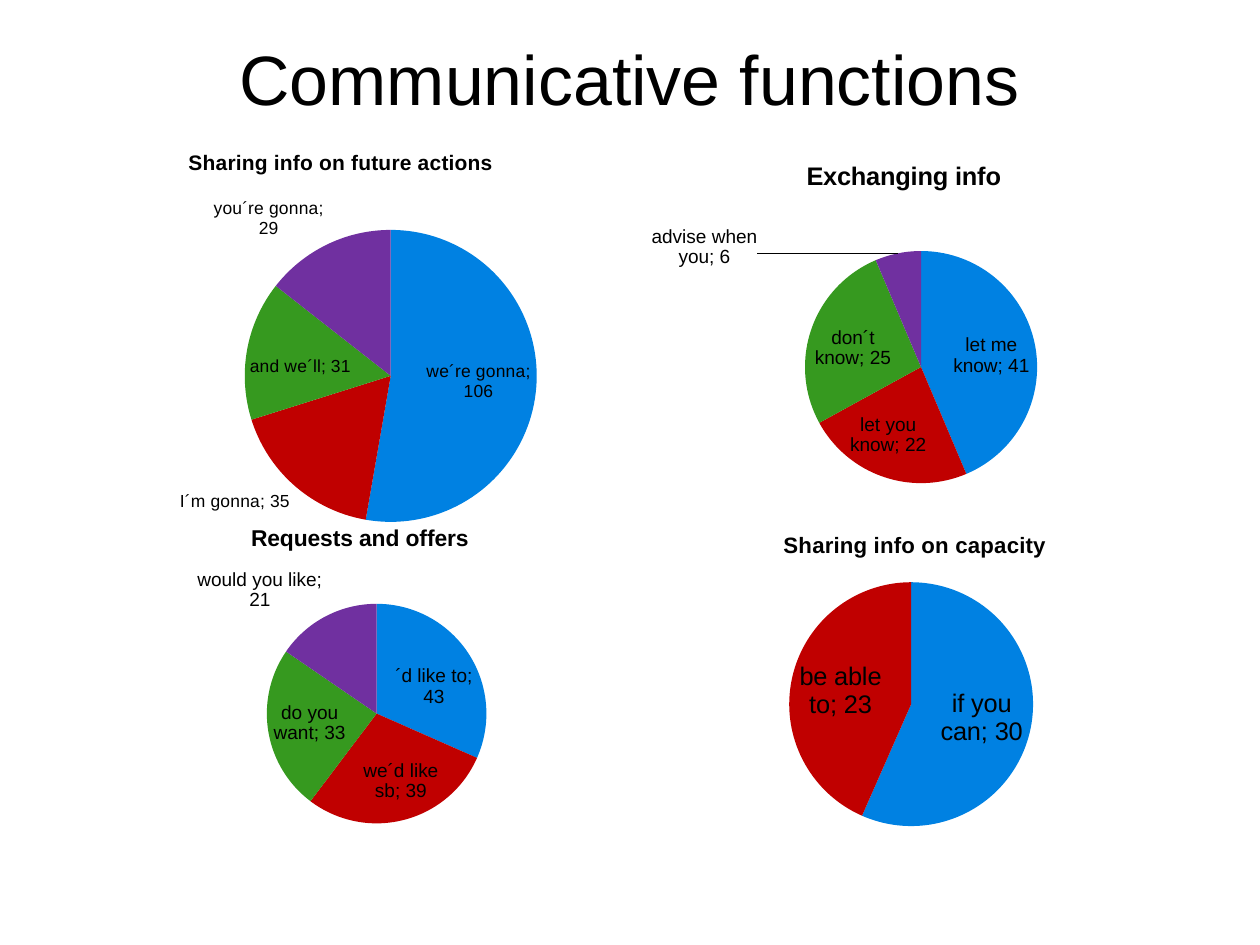
from pptx import Presentation
from pptx import util as u
from pptx.chart.data import CategoryChartData
from pptx.dml.color import RGBColor
from pptx.enum import chart as ch, text
from pptx.oxml import parse_xml
from pptx.oxml.ns import nsdecls, qn

FONT = "Arial"
SLICES = ["0081E2", "C00000", "36991F", "7030A0"]


def color(value):
    return RGBColor.from_string(value)


def style_font(font, size, bold=False, fill="000000"):
    font.name, font.size, font.bold = FONT, u.Pt(size), bold
    font.color.rgb = color(fill)


def write(tf, words, size, bold=False, spacing=None):
    p = tf.paragraphs[0]
    p.alignment = text.PP_ALIGN.CENTER
    p.line_spacing = spacing
    r = p.add_run()
    r.text = words
    style_font(r.font, size, bold)


def set_layout(parent, index, x, y, w=None, h=None):
    """Place a chart part by fractions of the chart box."""
    old = parent.find(qn("c:layout"))
    if old is not None:
        parent.remove(old)
    parts = [("xMode", "edge"), ("yMode", "edge")] if parent.tag != qn("c:dLbl") else []
    if w:
        parts.insert(0, ("layoutTarget", "inner"))
    parts += [("x", round(x, 4)), ("y", round(y, 4))]
    if w:
        parts += [("w", round(w, 4)), ("h", round(h, 4))]
    body = "".join(f'<c:{tag} val="{val}"/>' for tag, val in parts)
    parent.insert(index, parse_xml(
        f'<c:layout {nsdecls("c")}><c:manualLayout>{body}</c:manualLayout></c:layout>'))


def add_separator(labels):
    sep = parse_xml(f'<c:separator {nsdecls("c")}>; </c:separator>')
    labels.find(qn("c:showBubbleSize")).addnext(sep)


def title_region(s, box):
    sp = s.shapes.title
    sp.left, sp.top, sp.width, sp.height = (u.Cm(v) for v in box)
    tf = sp.text_frame
    tf.word_wrap = True
    tf.vertical_anchor = text.MSO_ANCHOR.TOP
    write(tf, "Communicative functions", 44, spacing=0.93)


def pie_region(s, box, name, counts, title_at, title_size, pie_at, diameter,
               label_size, moved=None):
    """Pie in box; title_at and pie_at are offsets from its corner in cm."""
    w, h = box[2:]
    data = CategoryChartData()
    data.categories = list(counts)
    data.add_series(name, list(counts.values()))
    chart = s.shapes.add_chart(ch.XL_CHART_TYPE.PIE, *(u.Cm(v) for v in box), data).chart
    chart.has_legend = False
    style_font(chart.font, label_size)

    # Chart title and plot position
    write(chart.chart_title.text_frame, name, title_size, bold=True)
    chart.chart_title.include_in_layout = False
    title = chart._chartSpace.chart.find(qn("c:title"))
    set_layout(title, 1, title_at[0] / w, title_at[1] / h)
    set_layout(chart._chartSpace.chart.plotArea, 0, pie_at[0] / w, pie_at[1] / h,
               diameter / w, diameter / h)

    # Slices
    plot = chart.plots[0]
    plot.vary_by_categories = True
    series = plot.series[0]
    for i, fill in enumerate(SLICES[:len(counts)]):
        fmt = series.points[i].format
        fmt.fill.solid()
        fmt.fill.fore_color.rgb = color(fill)
        fmt.line.fill.background()

    # Labels
    labels = series.data_labels
    labels.show_value = labels.show_category_name = True
    labels.position = ch.XL_LABEL_POSITION.BEST_FIT
    style_font(labels.font, label_size)
    add_separator(labels._element)
    if moved:
        i, dx, dy = moved
        label = series.points[i].data_label
        style_font(label.font, label_size)
        label.position = ch.XL_LABEL_POSITION.BEST_FIT
        d = labels._element.find(qn("c:dLbl"))
        d.find(qn("c:showCatName")).set("val", "1")
        add_separator(d)
        set_layout(d, 1, dx, dy)


def main():
    prs = Presentation()
    prs.slide_width, prs.slide_height = u.Cm(28), u.Cm(21)
    s = prs.slides.add_slide(prs.slide_layouts[5])
    title_region(s, (1.4, 0.84, 25.2, 3.5))

    pie_region(s, (0.7, 2.77, 13.6, 9.32), "Sharing info on future actions",
               {"we´re gonna": 106, "I´m gonna": 35, "and we´ll": 31, "you´re gonna": 29},
               (3.4, 0.45), 13.2, (4.74, 2.34), 6.49, 11)
    pie_region(s, (13.8, 2.95, 12.37, 9.1), "Exchanging info",
               {"let me know": 41, "let you know": 22, "don´t know": 25,
                "advise when you": 6},
               (4.02, 0.5), 16, (4.09, 2.63), 5.16, 12, moved=(3, -0.25, 0.05))
    pie_region(s, (13.62, 11.3, 13.3, 7.62), "Sharing info on capacity",
               {"if you can": 30, "be able to": 23},
               (3.7, 0.4), 14, (3.92, 1.64), 5.42, 16)
    pie_region(s, (0.92, 11.1, 14, 8.55), "Requests and offers",
               {"´d like to": 43, "we´d like sb": 39, "do you want": 33,
                "would you like": 21},
               (4.57, 0.45), 14.4, (5.01, 2.32), 4.88, 12)
    prs.save("out.pptx")


if __name__ == "__main__":
    main()
